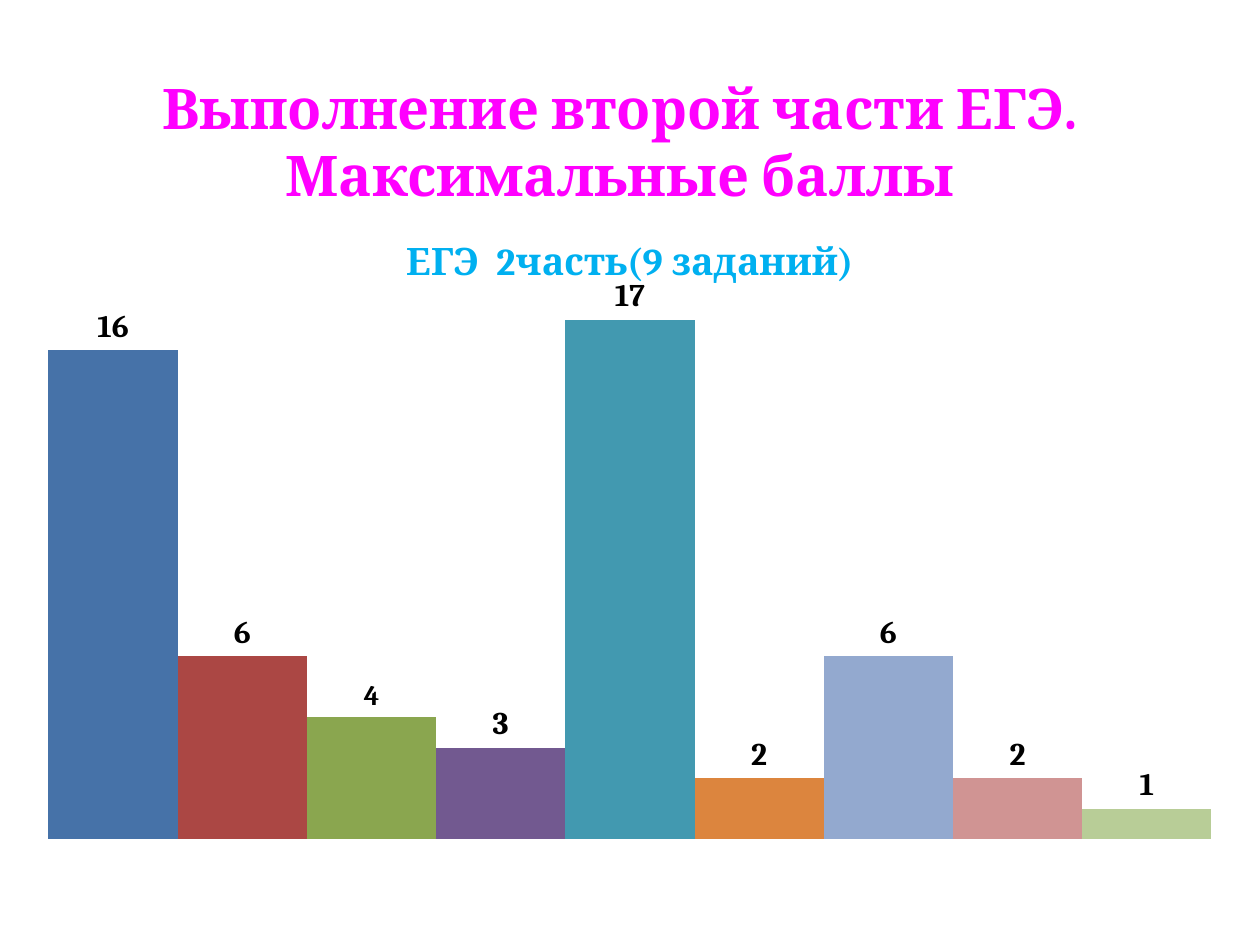
from dataclasses import dataclass

from lxml import etree
from pptx import Presentation
from pptx.chart.data import CategoryChartData
from pptx.dml.color import RGBColor
from pptx.enum.chart import XL_CHART_TYPE, XL_LABEL_POSITION
from pptx.enum.text import MSO_ANCHOR, PP_ALIGN
from pptx.oxml.ns import qn
from pptx.util import Inches, Pt

COLUMNS = XL_CHART_TYPE.COLUMN_CLUSTERED
ABOVE = XL_LABEL_POSITION.OUTSIDE_END
TOP = MSO_ANCHOR.TOP
CENTER = PP_ALIGN.CENTER


@dataclass(frozen=True)
class Theme:
    serif: str = "Cambria"
    sans: str = "Calibri"
    title: str = "FF00FF"
    head: str = "00B0F0"
    ink: str = "000000"
    bars: tuple = ("4672A8", "AB4744", "8AA64F", "725990", "4299B0",
                   "DC853E", "93A9CF", "D09493", "B8CD97")
    title_pt: float = 32
    head_pt: float = 21.6
    label_pt: float = 18
    small_pt: float = 16


SCORES = [16, 6, 4, 3, 17, 2, 6, 2, 1]
SMALL = 2  # index of the bar with the smaller label
PLOT = {"x": 0, "y": 0.12, "w": 1, "h": 0.84}


def set_plot(chart, area):
    """Fix the inner plot area, in fractions of the chart."""
    plot = chart._chartSpace.chart.plotArea
    for old in plot.findall(qn("c:layout")):
        plot.remove(old)
    layout = etree.Element(qn("c:layout"))
    plot.insert(0, layout)
    manual = etree.SubElement(layout, qn("c:manualLayout"))
    parts = [("layoutTarget", "inner"), ("xMode", "edge"), ("yMode", "edge")]
    for tag, val in parts + list(area.items()):
        etree.SubElement(manual, qn(f"c:{tag}")).set("val", str(val))


class Deck:
    def __init__(self, theme, slide):
        self.theme = theme
        self.slide = slide

    def style(self, font, face, size, color, bold=True):
        font.name = face
        font.size = Pt(size)
        font.bold = bold
        font.color.rgb = RGBColor.from_string(color)

    def title(self, text, *box):
        t = self.theme
        frame = self.slide.shapes.add_textbox(*map(Inches, box)).text_frame
        frame.word_wrap = True
        frame.vertical_anchor = TOP
        frame.margin_left = frame.margin_right = 0
        frame.margin_top = frame.margin_bottom = 0
        para = frame.paragraphs[0]
        para.text = text
        para.alignment = CENTER
        self.style(para.font, t.serif, t.title_pt, t.title)

    def chart(self, head, scores, *box):
        t = self.theme
        data = CategoryChartData()
        data.categories = ["1"]
        for num, score in enumerate(scores, 1):
            data.add_series(f"Series {num}", [score])
        chart = self.slide.shapes.add_chart(
            COLUMNS, *map(Inches, box), data).chart
        self.style(chart.font, t.sans, t.label_pt, t.ink, False)
        chart.has_legend = False
        para = chart.chart_title.text_frame.paragraphs[0]
        para.text = head
        self.style(para.font, t.serif, t.head_pt, t.head)

        axis = chart.value_axis
        axis.minimum_scale, axis.maximum_scale = 0, 18
        axis.has_major_gridlines = False
        axis.visible = chart.category_axis.visible = False
        plot = chart.plots[0]
        plot.gap_width = 75
        plot.overlap = 0
        plot.vary_by_categories = False
        for i, (bar, color) in enumerate(zip(plot.series, t.bars)):
            bar.format.fill.solid()
            bar.format.fill.fore_color.rgb = RGBColor.from_string(color)
            labels = bar.data_labels
            labels.show_value = True
            labels.position = ABOVE
            size = t.small_pt if i == SMALL else t.label_pt
            self.style(labels.font, t.serif, size, t.ink)
        set_plot(chart, PLOT)


def main():
    prs = Presentation()
    prs.slide_width, prs.slide_height = Inches(10), Inches(7.5)
    deck = Deck(Theme(), prs.slides.add_slide(prs.slide_layouts[6]))
    deck.title("Выполнение второй части ЕГЭ. Максимальные баллы",
               0.67, 0.58, 8.5, 1.57)
    deck.chart("ЕГЭ  2часть(9 заданий)", SCORES, 0, 1.67, 10, 5.2)
    prs.save("out.pptx")


if __name__ == "__main__":
    main()
